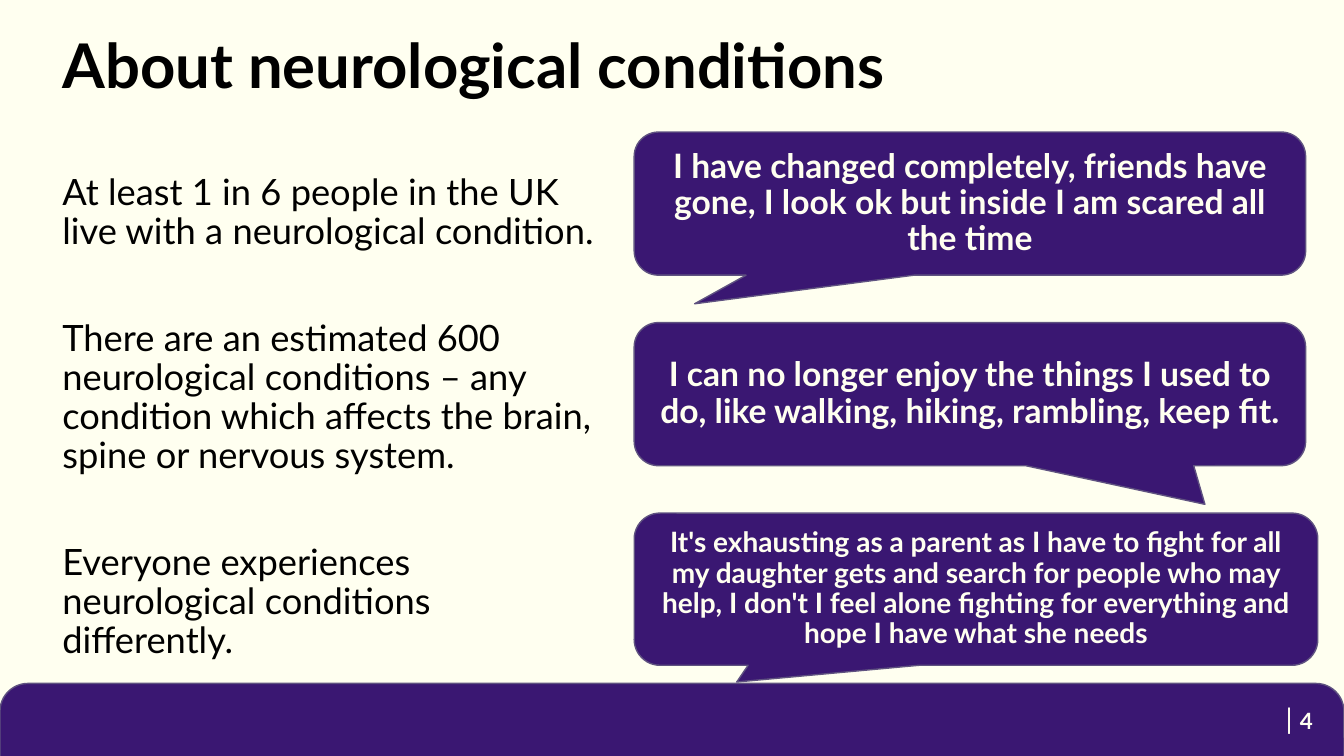
from pptx import Presentation
from pptx.dml.color import RGBColor
from pptx.enum.shapes import MSO_SHAPE as Preset
from pptx.enum.text import MSO_ANCHOR as Anchor, PP_ALIGN as Align
from pptx.util import Inches, Pt

TITLE = "About neurological conditions"
FACTS = [
    "At least 1 in 6 people in the UK live with a neurological condition.",
    "There are an estimated 600 neurological conditions – any condition which affects the brain, spine or nervous system.",
    "Everyone experiences neurological conditions differently.",
]
QUOTES = [
    {"text": "I have changed completely, friends have gone, I look ok but inside I am scared all the time",
     "size": "quote", "extent": (6.66, 1.42), "tail": (-0.41, 0.7)},
    {"text": "I can no longer enjoy the things I used to do, like walking, hiking, rambling, keep fit.",
     "size": "quote", "extent": (6.66, 1.42), "tail": (0.35, 0.77)},
    {"text": "It's exhausting as a parent as I have to fight for all my daughter gets and search for people "
             "who may help, I don't I feel alone fighting for everything and hope I have what she needs",
     "size": "long_quote", "extent": (6.78, 1.51), "tail": (-0.35, 0.61)},
]
PAGE_NUMBER = "4"

THEME = {
    "font": "Lato",
    "colors": {"paper": "FFFFF0", "ink": "000000", "purple": "3A1772", "outline": "5F5280"},
    "sizes": {"title": 44, "fact": 25.9, "quote": 24, "long_quote": 20, "divider": 20, "page": 16},
}
QUOTE_LEFT, QUOTE_TOP, QUOTE_STEP = 6.29, 1.31, 1.89
FACT_GAP = 48


def color(name):
    return RGBColor.from_string(THEME["colors"][name])


def write(paragraph, text, size, ink="ink", bold=False, align=Align.LEFT, spacing=0.9, before=0):
    paragraph.alignment = align
    paragraph.line_spacing = spacing
    paragraph.space_before = Pt(before)
    run = paragraph.add_run()
    run.text = text
    run.font.name = THEME["font"]
    run.font.size = Pt(THEME["sizes"][size])
    run.font.bold = bold
    run.font.color.rgb = color(ink)


def add_panel(slide, preset, box, adjustments):
    shape = slide.shapes.add_shape(preset, *map(Inches, box))
    for index, value in enumerate(adjustments):
        shape.adjustments[index] = value
    shape.shadow.inherit = False
    shape.fill.solid()
    shape.fill.fore_color.rgb = color("purple")
    shape.line.color.rgb = color("outline")
    shape.line.width = Pt(1)
    return shape


def add_text_frame(slide, box, anchor=Anchor.TOP):
    frame = slide.shapes.add_textbox(*map(Inches, box)).text_frame
    frame.word_wrap = True
    frame.vertical_anchor = anchor
    return frame


def main():
    presentation = Presentation()
    presentation.slide_width, presentation.slide_height = Inches(13.33), Inches(7.5)
    slide = presentation.slides.add_slide(presentation.slide_layouts[6])
    slide.background.fill.solid()
    slide.background.fill.fore_color.rgb = color("paper")

    add_panel(slide, Preset.ROUNDED_RECTANGLE, (0, 6.78, 13.33, 0.99), [0.28])

    title = add_text_frame(slide, (0.52, 0.26, 12.07, 0.84), Anchor.MIDDLE)
    write(title.paragraphs[0], TITLE, "title", bold=True)

    page = add_text_frame(slide, (11.92, 6.96, 1.1, 0.34))
    page.margin_left = page.margin_right = page.margin_top = page.margin_bottom = 0
    for text, size, bold in (("| ", "divider", False), (PAGE_NUMBER, "page", True)):
        write(page.paragraphs[0], text, size, ink="paper", bold=bold, align=Align.RIGHT, spacing=1.0)

    for index, quote in enumerate(QUOTES):
        box = (QUOTE_LEFT, QUOTE_TOP + index * QUOTE_STEP, *quote["extent"])
        callout = add_panel(slide, Preset.ROUNDED_RECTANGULAR_CALLOUT, box, (*quote["tail"], 0.17))
        frame = callout.text_frame
        frame.word_wrap = True
        frame.vertical_anchor = Anchor.MIDDLE
        write(frame.paragraphs[0], quote["text"], quote["size"], ink="paper", bold=True, align=Align.CENTER)

    facts = add_text_frame(slide, (0.52, 1.68, 5.58, 4.72))
    for index, fact in enumerate(FACTS):
        paragraph = facts.add_paragraph() if index else facts.paragraphs[0]
        write(paragraph, fact, "fact", before=FACT_GAP if index else 0)

    presentation.save("out.pptx")


if __name__ == "__main__":
    main()
